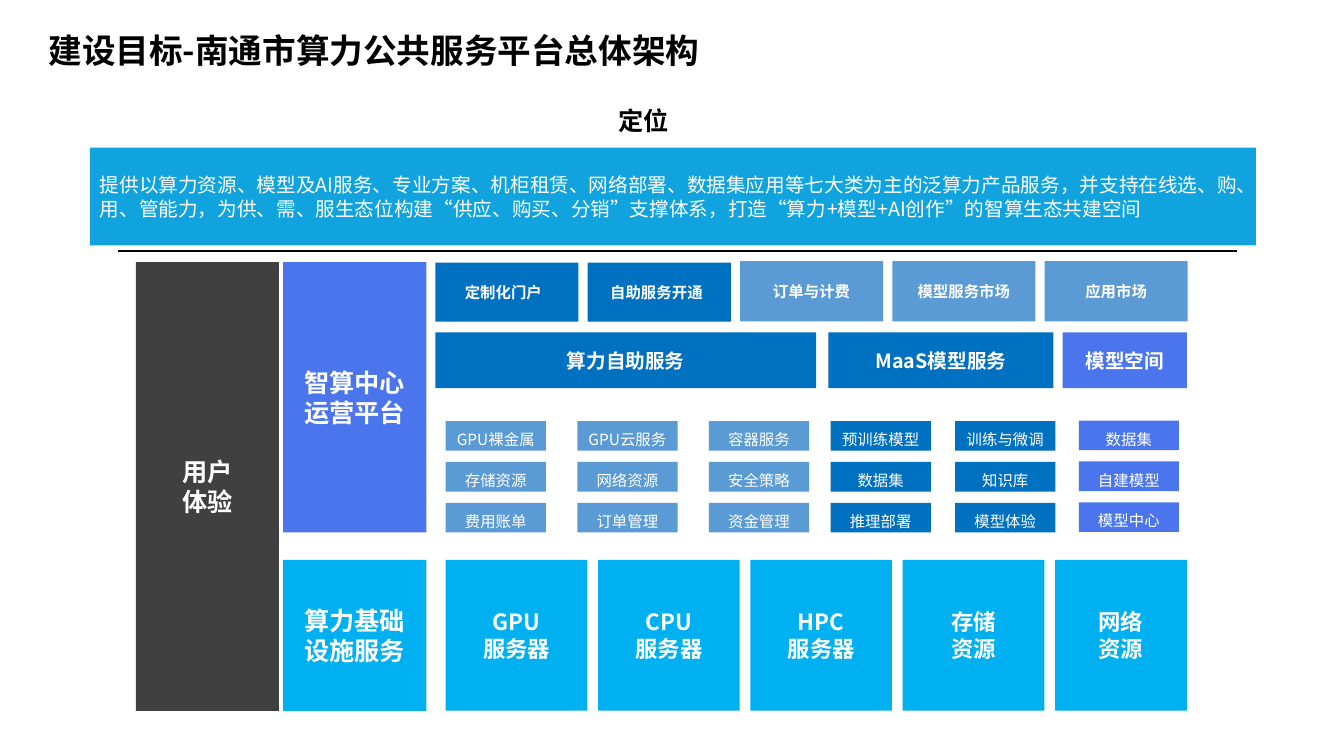
"""Build the slide on the overall architecture of the computing platform."""
import pptx
import pptx.util
import pptx.dml.color
import pptx.enum.text
import pptx.enum.shapes
import pptx.oxml.ns
import lxml.etree

Pt = pptx.util.Pt
Color = pptx.dml.color.RGBColor
Align = pptx.enum.text.PP_ALIGN
Anchor = pptx.enum.text.MSO_ANCHOR
qn = pptx.oxml.ns.qn

BLACK = Color(0, 0, 0)
WHITE = Color(255, 255, 255)
GREY = Color(0x40, 0x40, 0x40)
SKY = Color(0x11, 0xA3, 0xDE)
CYAN = Color(0x00, 0xB0, 0xF0)
BLUE = Color(0x00, 0x70, 0xC0)
PALE = Color(0x5B, 0x9B, 0xD5)
VIOLET = Color(0x4A, 0x75, 0xEC)


class Board:
    face = "Noto Sans CJK SC"

    def __init__(self, deck):
        self.slide = deck.slides.add_slide(deck.slide_layouts[5])
        self.shapes = self.slide.shapes

    def letter(self, shape, text, size, color=WHITE, bold=True,
               align=Align.CENTER, anchor=Anchor.MIDDLE, space=1.0,
               inset=(7.2, 3.6, 7.2, 3.6)):
        frame = shape.text_frame
        left, top, right, bottom = map(Pt, inset)
        form = {"word_wrap": True, "vertical_anchor": anchor,
                "auto_size": pptx.enum.text.MSO_AUTO_SIZE.NONE,
                "margin_left": left, "margin_top": top,
                "margin_right": right, "margin_bottom": bottom}
        for key, value in form.items():
            setattr(frame, key, value)
        frame.text = text
        style = {"name": self.face, "size": Pt(size), "bold": bold}
        for para in frame.paragraphs:
            para.alignment = align
            para.line_spacing = space
            for run in para.runs:
                for key, value in style.items():
                    setattr(run.font, key, value)
                run.font.color.rgb = color
                east = lxml.etree.SubElement(run.font._element, qn("a:ea"))
                east.set("typeface", self.face)

    def title(self, text, rect, size):
        shape = self.shapes.title
        for key, value in zip(("left", "top", "width", "height"), rect):
            setattr(shape, key, Pt(value))
        self.letter(shape, text, size, BLACK, align=Align.LEFT)

    def label(self, text, rect, size):
        self.letter(self.shapes.add_textbox(*map(Pt, rect)), text, size, BLACK)

    def box(self, text, rect, fill, size, **form):
        kind = pptx.enum.shapes.MSO_SHAPE.RECTANGLE
        shape = self.shapes.add_shape(kind, *map(Pt, rect))
        shape.shadow.inherit = False
        shape.fill.solid()
        shape.fill.fore_color.rgb = fill
        shape.line.fill.background()
        self.letter(shape, text, size, **form)

    def rule(self, left, right, top):
        kind = pptx.enum.shapes.MSO_CONNECTOR.STRAIGHT
        line = self.shapes.add_connector(kind, Pt(left), Pt(top), Pt(right), Pt(top))
        line.line.color.rgb = BLACK
        line.line.width = Pt(1)
        lxml.etree.SubElement(line._element.spPr, qn("a:effectLst"))


def main():
    deck = pptx.Presentation()
    deck.slide_width, deck.slide_height = Pt(960), Pt(540)
    board = Board(deck)
    board.title("建设目标-南通市算力公共服务平台总体架构", (27.4, 18, 509, 36), 24)
    board.rule(84.2, 883.6, 179.2)
    board.box("提供以算力资源、模型及AI服务、专业方案、机柜租赁、网络部署、数据集应用等七大类为主的泛算力产品服务，"
              "并支持在线选、购、用、管能力，为供、需、服生态位构建“供应、购买、分销”支撑体系，"
              "打造“算力+模型+AI创作”的智算生态共建空间",
              (64.2, 105.4, 833, 70), SKY, 14, bold=False, align=Align.LEFT)
    board.label("定位", (405.4, 71.3, 108.7, 28.8), 18)

    board.box("用户\n体验", (97, 187.2, 102.2, 320.6), GREY, 18)
    board.box("智算中心运营平台", (202.3, 187.2, 102.2, 193), VIOLET, 18)
    board.box("算力基础设施服务", (202.3, 400, 102.2, 107.8), CYAN, 18)

    step = 108.8
    portals = [("定制化门户", 21), ("自助服务开通", 16),
               ("订单与计费", 0), ("模型服务市场", 0), ("应用市场", 0)]
    for col, (name, pad) in enumerate(portals):
        top = 187.5 if pad else 186.5
        board.box(name, (311 + col * step, top, 102.2, 229.7 - top),
                  BLUE if pad else PALE, 11,
                  align=Align.LEFT if pad else Align.CENTER,
                  inset=(pad or 7.2, 3.6, 7.2, 3.6))

    areas = [("算力自助服务", 311, 272, BLUE),
             ("MaaS模型服务", 591.8, 160.7, BLUE),
             ("模型空间", 759, 88.8, VIOLET)]
    for name, left, width, fill in areas:
        board.box(name, (left, 237.5, width, 39.8), fill, 14)

    tags = [(318.4, 300.8, PALE, ("GPU裸金属", "存储资源", "费用账单")),
            (412.4, 300.8, PALE, ("GPU云服务", "网络资源", "订单管理")),
            (506.4, 300.8, PALE, ("容器服务", "安全策略", "资金管理")),
            (593.3, 300.8, BLUE, ("预训练模型", "数据集", "推理部署")),
            (682.3, 300.8, BLUE, ("训练与微调", "知识库", "模型体验")),
            (770.6, 300.4, VIOLET, ("数据集", "自建模型", "模型中心"))]
    for left, top, fill, names in tags:
        for row, name in enumerate(names):
            board.box(name, (left, top + row * 29.2, 71.6, 21.2), fill, 11,
                      bold=False, anchor=Anchor.TOP, space=1.5, inset=(0,) * 4)

    bases = ["GPU\n服务器", "CPU\n服务器", "HPC\n服务器", "存储\n资源", "网络\n资源"]
    for col, name in enumerate(bases):
        width = 94.2 if name == bases[-1] else 101.2
        board.box(name, (318.4 + col * step, 400, width, 107.6), CYAN, 16,
                  inset=(0,) * 4)

    deck.save("out.pptx")


if __name__ == "__main__":
    main()
